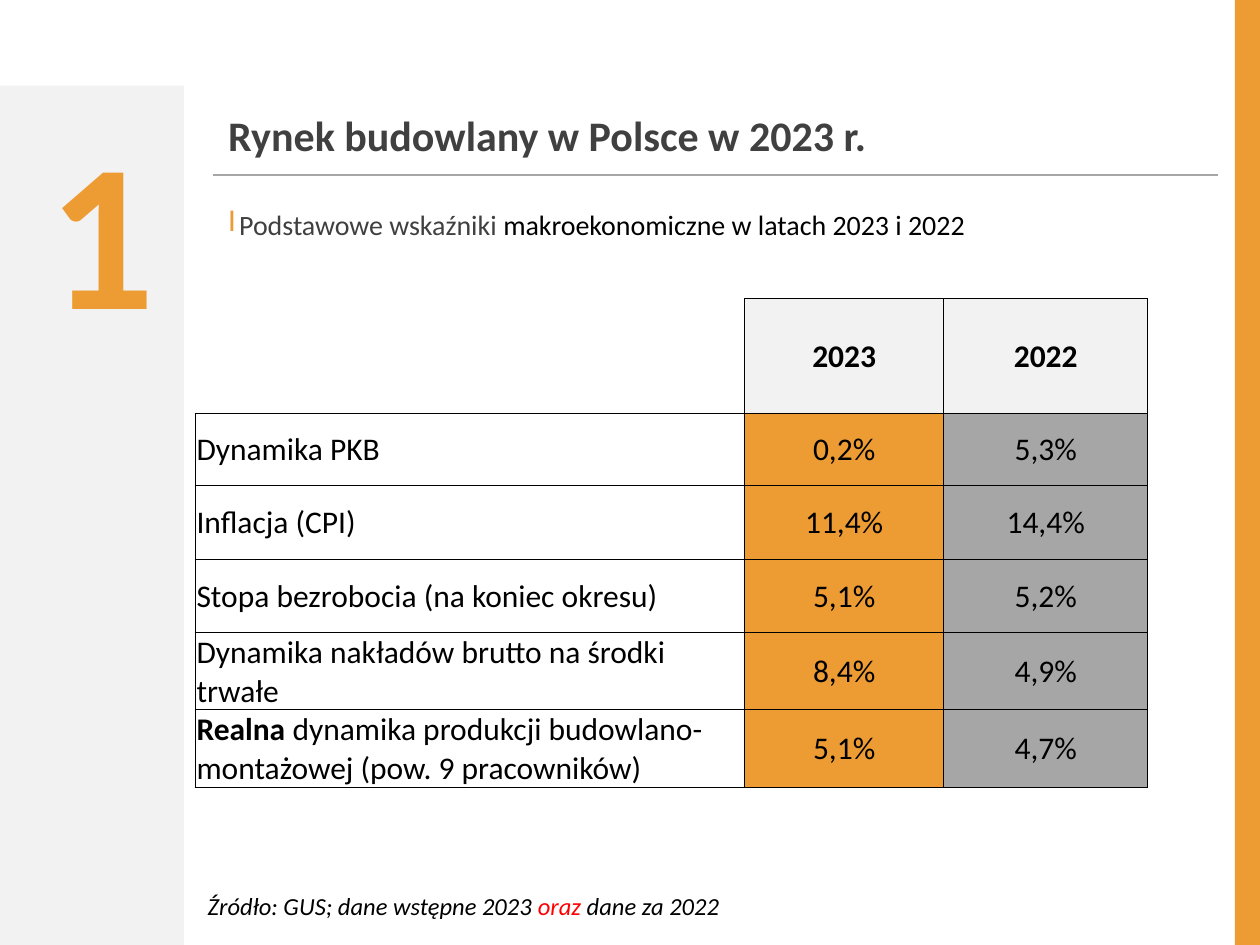
from pptx import Presentation
from pptx import util as u
from pptx.dml.color import RGBColor
from pptx.enum import shapes, text
from pptx.oxml.ns import qn
from lxml import etree

ORANGE, PALE, GREY = "ED9B33", "F2F2F2", "A6A6A6"
DARK, BLACK, RED = "404040", "000000", "FF0000"
LEFT, MID = text.PP_ALIGN.LEFT, text.PP_ALIGN.CENTER


def rgb(code):
    return RGBColor.from_string(code)


def add(node, tag, **attrs):
    return etree.SubElement(node, qn(tag), attrs)


def write(frame, *runs, size=18, color=BLACK, bold=False, italic=False,
          align=LEFT, anchor=text.MSO_ANCHOR.TOP, bullet=None):
    """Fill a frame; each run is a string or a (string, overrides) pair."""
    frame.word_wrap = True
    frame.vertical_anchor = anchor
    para = frame.paragraphs[0]
    para.alignment = align
    if bullet:
        props = para._p.get_or_add_pPr()
        indent = u.Inches(0.09)
        props.set("marL", str(indent))
        props.set("indent", str(-indent))
        add(add(props, "a:buClr"), "a:srgbClr", val=ORANGE)
        add(props, "a:buChar", char=bullet)
    for item in runs:
        words, own = (item, {}) if isinstance(item, str) else item
        run = para.add_run()
        run.text = words
        font = run.font
        font.name, font.size = "Calibri", u.Pt(size)
        font.bold, font.italic = own.get("bold", bold), italic
        font.color.rgb = rgb(own.get("color", color))


def edge(cell, side, width):
    """Draw one cell border; a width of 0 hides it."""
    line = add(cell._tc.get_or_add_tcPr(), "a:ln" + side, w=str(u.Pt(width)))
    if width:
        add(add(line, "a:solidFill"), "a:srgbClr", val=BLACK)
    else:
        add(line, "a:noFill")


class Deck:
    def __init__(self, wide, high):
        self.prs = Presentation()
        self.prs.slide_width = u.Inches(wide)
        self.prs.slide_height = u.Inches(high)
        self.slide = self.prs.slides.add_slide(self.prs.slide_layouts[5])

    def rect(self, *box, fill):
        shape = self.slide.shapes.add_shape(
            shapes.MSO_SHAPE.RECTANGLE, *map(u.Inches, box))
        shape.shadow.inherit = False
        shape.fill.solid()
        shape.fill.fore_color.rgb = rgb(fill)
        shape.line.fill.background()

    def rule(self, *ends, color, width=0.75):
        line = self.slide.shapes.add_connector(
            shapes.MSO_CONNECTOR.STRAIGHT, *map(u.Inches, ends))
        line.line.color.rgb = rgb(color)
        line.line.width = u.Pt(width)
        add(line._element.spPr, "a:effectLst")

    def title(self, words, *box, **form):
        shape = self.slide.shapes.title
        shape.left, shape.top, shape.width, shape.height = map(u.Inches, box)
        write(shape.text_frame, words, **form)

    def label(self, *runs, box, top=0.05, **form):
        shape = self.slide.shapes.add_textbox(*map(u.Inches, box))
        shape.text_frame.margin_top = u.Inches(top)
        write(shape.text_frame, *runs, **form)

    def table(self, left, top, cols, rows, data):
        frame = self.slide.shapes.add_table(
            len(rows), len(cols), u.Inches(left), u.Inches(top),
            u.Inches(sum(cols)), u.Inches(sum(rows)))
        grid = frame.table
        grid.first_row = grid.horz_banding = False
        for col, width in zip(grid.columns, cols):
            col.width = u.Inches(width)
        for row, height in zip(grid.rows, rows):
            row.height = u.Inches(height)
        for r, line in enumerate(data):
            for c, runs in enumerate(line):
                self.cell(grid.cell(r, c), r, c, runs)

    def cell(self, cell, r, c, runs):
        cell.margin_left = cell.margin_right = cell.margin_top = u.Inches(0.01)
        cell.margin_bottom = 0
        write(cell.text_frame, *runs, bold=r == 0, align=MID if c else LEFT)
        cell.vertical_anchor = text.MSO_ANCHOR.MIDDLE
        # Borders: heavier around the label column, none outside the corner
        corner = r == 0 and c == 0
        edge(cell, "L", 0 if corner else 1 if c < 2 else 0.5)
        edge(cell, "R", 1 if c == 0 else 0.5)
        edge(cell, "T", 0 if corner else 0.5)
        edge(cell, "B", 0.5)
        # Fill by column, header row pale
        if c == 0:
            cell.fill.background()
        else:
            cell.fill.solid()
            cell.fill.fore_color.rgb = rgb((PALE, (ORANGE, GREY)[c - 1])[r > 0])


def main():
    deck = Deck(10, 7.5)

    # Side bands and title rule
    deck.rect(0, 0.68, 1.46, 6.82, fill=PALE)
    deck.rect(9.8, 0, 0.2, 7.5, fill=ORANGE)
    deck.rule(1.69, 1.39, 9.67, 1.39, color=GREY)

    # Section number, title and lead line
    deck.label("1", box=(-1.5, 0.69, 2.83, 2.39), top=0.1, size=120,
               color=ORANGE, bold=True, align=text.PP_ALIGN.RIGHT)
    deck.title("Rynek budowlany w Polsce w 2023 r.", 1.71, 0.75, 7.98, 0.63,
               size=24, color=DARK, bold=True, anchor=text.MSO_ANCHOR.MIDDLE)
    deck.label(("Podstawowe wskaźniki ", {"color": DARK}),
               "makroekonomiczne w latach 2023 i 2022",
               box=(1.71, 1.6, 7.98, 5.43), size=16, bullet="I")

    # Indicators
    data = [
        ([], ["2023"], ["2022"]),
        (["Dynamika PKB"], ["0,2%"], ["5,3%"]),
        (["Inflacja (CPI)"], ["11,4%"], ["14,4%"]),
        (["Stopa bezrobocia (na koniec okresu)"], ["5,1%"], ["5,2%"]),
        (["Dynamika nakładów brutto na środki trwałe"], ["8,4%"], ["4,9%"]),
        ([("Realna", {"bold": True}),
          " dynamika produkcji budowlano-montażowej (pow. 9 pracowników)"],
         ["5,1%"], ["4,7%"]),
    ]
    deck.table(1.55, 2.37, [4.36, 1.58, 1.62],
               [0.91, 0.57, 0.59, 0.58, 0.61, 0.62], data)

    # Source line
    deck.label("Źródło: GUS; dane wstępne 2023 ", ("oraz ", {"color": RED}),
               "dane za 2022", box=(1.55, 7.02, 5.75, 0.34),
               size=14, italic=True)

    deck.prs.save("out.pptx")


if __name__ == "__main__":
    main()
